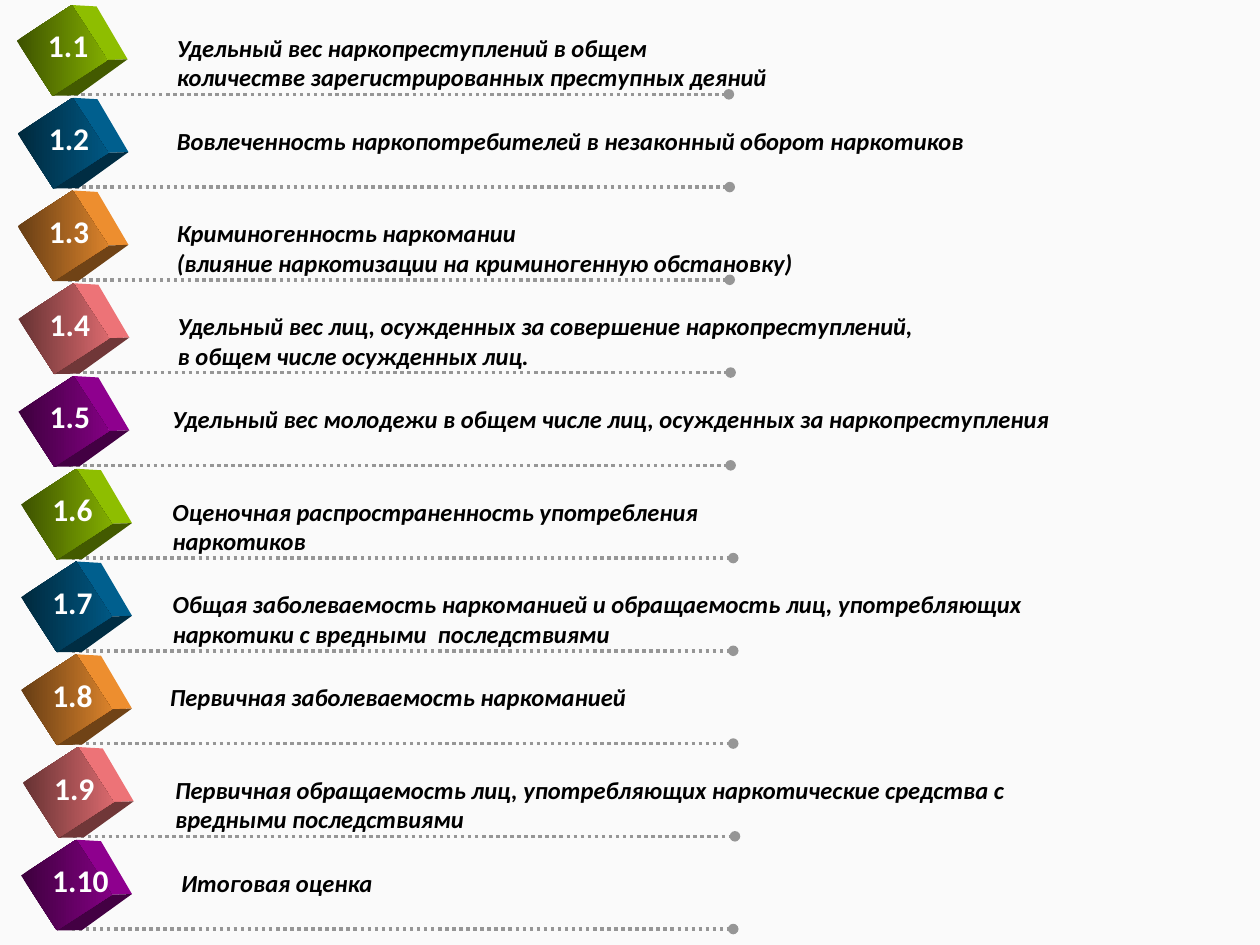
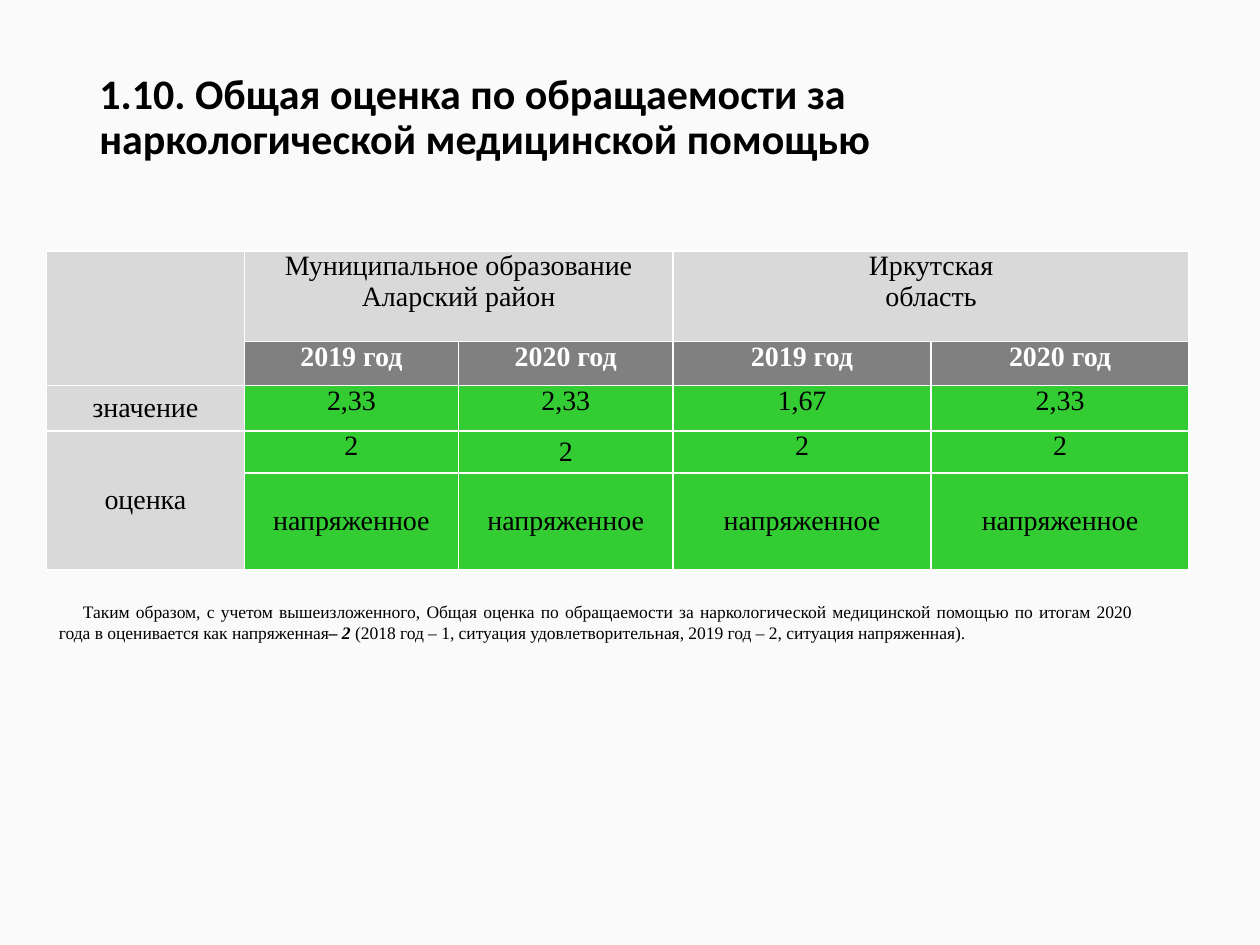
from dataclasses import dataclass
from math import cos, radians, sin

from lxml.etree import SubElement
from pptx import Presentation
from pptx.dml.color import RGBColor
from pptx.enum.dml import MSO_LINE
from pptx.enum.shapes import MSO_CONNECTOR as Connector, MSO_SHAPE as Shape
from pptx.enum.text import MSO_ANCHOR as Anchor, PP_ALIGN as Align
from pptx.oxml import parse_xml
from pptx.oxml.ns import nsdecls, qn
from pptx.util import Pt


@dataclass(frozen=True)
class Theme:
    sans: str = "Calibri"
    serif: str = "Times New Roman"
    background: str = "FAFAFA"
    black: str = "000000"
    white: str = "FFFFFF"
    dots: str = "969696"
    label_fill: str = "D9D9D9"
    year_fill: str = "808080"
    score_fill: str = "33CC33"
    cubes: tuple = ("99CC00", "006699", "FF9933", "FF7C80", "990099")
    title_size: int = 24
    number_size: int = 18
    table_size: int = 16
    item_size: int = 14
    note_size: int = 10


THEME = Theme()

# Content: number, cube left, text left, text width, lines
INDICATORS = [
    ("1.1", 16, 94, 401, ["Удельный вес наркопреступлений в общем",
                          "количестве зарегистрированных преступных деяний"]),
    ("1.2", 16.5, 94, 518, ["Вовлеченность наркопотребителей в незаконный оборот наркотиков"]),
    ("1.3", 16.5, 94, 416, ["Криминогенность наркомании",
                            "(влияние наркотизации на криминогенную обстановку)"]),
    ("1.4", 17, 94.5, 488, ["Удельный вес лиц, осужденных за совершение наркопреступлений,",
                            "в общем числе осужденных лиц."]),
    ("1.5", 17, 91.5, 570,
     ["Удельный вес молодежи в общем числе лиц, осужденных за наркопреступления"]),
    ("1.6", 18.5, 91.5, 332, ["Оценочная распространенность употребления наркотиков"]),
    ("1.7", 18.5, 91.5, 525, ["Общая заболеваемость наркоманией и обращаемость лиц, "
                              "употребляющих наркотики с вредными  последствиями"]),
    ("1.8", 18.5, 90, 480, ["Первичная заболеваемость наркоманией"]),
    ("1.9", 19.5, 93, 492, ["Первичная обращаемость лиц, употребляющих наркотические "
                            "средства с вредными последствиями"]),
    ("1.10", 18.5, 96.5, 401, ["Итоговая оценка"]),
]

TITLE = "1.10. Общая оценка по обращаемости за наркологической медицинской помощью"
COLUMNS = [113, 122.5, 122.5, 147.5, 147.5]
ROWS = [52, 25, 26, 24, 55.5]
SCORES = [
    ["", "Муниципальное образование Аларский район", "", "Иркутская\nобласть", ""],
    ["", "2019 год", "2020 год", "2019 год", "2020 год"],
    ["значение", "2,33", "2,33", "1,67", "2,33"],
    ["оценка", "2", "2", "2", "2"],
    ["", "напряженное", "напряженное", "напряженное", "напряженное"],
]
MERGES = [((0, 0), (1, 0)), ((0, 1), (0, 2)), ((0, 3), (0, 4)), ((3, 0), (4, 0))]
NOTE = [
    ("Таким образом, с учетом вышеизложенного, Общая оценка по обращаемости за "
     "наркологической медицинской помощью по итогам 2020 года в оценивается как "
     "напряженная", False),
    ("– 2 ", True),
    ("(2018 год – 1, ситуация удовлетворительная, 2019 год – 2, ситуация напряженная).", False),
]

# Geometry of the list
FIRST_TOP, ROW_PITCH = 8.6, 53
CUBE_SIDE, CUBE_TURN = 37.5, 57
LINE_LENGTH = 378


def color(code, factor=1.0):
    return RGBColor(*(round(part * factor) for part in RGBColor.from_string(code)))


def style(font, size, code, name=THEME.sans, bold=False, italic=False):
    font.name, font.size = name, Pt(size)
    font.bold, font.italic = bold, italic
    font.color.rgb = color(code)


def add_text(shapes, left, top, width, height, lines, size, code=THEME.black,
             italic=False, wrap=True):
    box = shapes.add_textbox(Pt(left), Pt(top), Pt(width), Pt(height))
    frame = box.text_frame
    frame.word_wrap = wrap
    frame.text = "\n".join(lines)
    for para in frame.paragraphs:
        style(para.font, size, code, bold=True, italic=italic)
    return frame


def add_page(deck):
    page = deck.slides.add_slide(deck.slide_layouts[6])
    page.background.fill.solid()
    page.background.fill.fore_color.rgb = color(THEME.background)
    return page


def add_dotted_line(shapes, left, y):
    line = shapes.add_connector(Connector.STRAIGHT, Pt(left), Pt(y),
                                Pt(left + LINE_LENGTH), Pt(y))
    line.line.color.rgb = color(THEME.dots)
    line.line.width = Pt(2)
    line.line.dash_style = MSO_LINE.ROUND_DOT
    SubElement(line.line._get_or_add_ln(), qn("a:tailEnd"), type="oval")
    SubElement(line._element.spPr, qn("a:effectLst"))


def add_cube(shapes, center_x, center_y, code):
    # Corners of the turned front square, measured from its centre
    half, turn = CUBE_SIDE / 2, radians(CUBE_TURN)
    across, along = half * cos(turn), half * sin(turn)
    upper = (along - across, -along - across)
    right = (across + along, along - across)
    lower = (across - along, along + across)
    far_upper, far_right, far_lower = (19.7, -25.1), (37.4, 5.1), (8.9, 25.7)

    # Lit and shaded sides
    for corners, shade in (((upper, far_upper, far_right, right), 0.93),
                           ((lower, right, far_right, far_lower), 0.44)):
        points = [(Pt(center_x + x), Pt(center_y + y)) for x, y in corners]
        builder = shapes.build_freeform(*points[0])
        builder.add_line_segments(points[1:], close=True)
        side = builder.convert_to_shape()
        side.fill.solid()
        side.fill.fore_color.rgb = color(code, shade)
        side.line.fill.background()
        side.shadow.inherit = False

    # Front
    front = shapes.add_shape(Shape.RECTANGLE, Pt(center_x - half), Pt(center_y - half),
                             Pt(CUBE_SIDE), Pt(CUBE_SIDE))
    front.rotation = CUBE_TURN
    front.fill.gradient()
    front.fill.gradient_angle = CUBE_TURN
    for stop, shade in zip(front.fill.gradient_stops, (0.4, 0.85)):
        stop.color.rgb = color(code, shade)
    front.line.fill.background()
    front.shadow.inherit = False


def build_list(deck):
    page = add_page(deck)
    for index, (number, left, text_left, text_width, lines) in enumerate(INDICATORS):
        top = FIRST_TOP + index * ROW_PITCH
        shapes = page.shapes.add_group_shape().shapes
        add_dotted_line(shapes, left + 22.5, top + 45.3)
        add_cube(shapes, left + 19.5, top + 20.2, THEME.cubes[index % len(THEME.cubes)])
        add_text(shapes, text_left, top + 6.7, text_width, 41, lines,
                 THEME.item_size, italic=True)
        add_text(shapes, left + 4.3, top + 3, 37.5 if len(number) < 4 else 47, 29,
                 [number], THEME.number_size, THEME.white, wrap=False)


def cell_fill(row, column):
    if row == 0 or column == 0:
        return THEME.label_fill
    return THEME.year_fill if row == 1 else THEME.score_fill


def add_borders(cell):
    properties = cell._tc.get_or_add_tcPr()
    for position, side in enumerate(("lnL", "lnR", "lnT", "lnB")):
        properties.insert(position, parse_xml(
            f'<a:{side} {nsdecls("a")} w="12700"><a:solidFill>'
            f'<a:srgbClr val="{THEME.white}"/></a:solidFill></a:{side}>'))


def add_scores(page):
    table = page.shapes.add_table(len(ROWS), len(COLUMNS), Pt(26.6), Pt(143.3),
                                  Pt(sum(COLUMNS)), Pt(sum(ROWS))).table
    table.first_row = table.horz_banding = False
    for column, width in zip(table.columns, COLUMNS):
        column.width = Pt(width)
    for row, height in zip(table.rows, ROWS):
        row.height = Pt(height)
    for start, end in MERGES:
        table.cell(*start).merge(table.cell(*end))
    for row, texts in enumerate(SCORES):
        for column, text in enumerate(texts):
            cell = table.cell(row, column)
            cell.fill.solid()
            cell.fill.fore_color.rgb = color(cell_fill(row, column))
            add_borders(cell)
            cell.margin_left = cell.margin_right = Pt(3)
            cell.margin_top = cell.margin_bottom = 0
            centered = column == 0 or row == 4 or (row, column) == (3, 2)
            cell.vertical_anchor = Anchor.MIDDLE if centered else Anchor.TOP
            if not text:
                continue
            cell.text = text
            for para in cell.text_frame.paragraphs:
                para.alignment = Align.CENTER
                style(para.font, THEME.table_size,
                      THEME.white if row == 1 else THEME.black, THEME.serif, bold=row == 1)


def build_scores(deck):
    page = add_page(deck)

    # Title
    frame = add_text(page.shapes, 49.7, 28.8, 620.6, 104.4, [TITLE], THEME.title_size)
    frame.vertical_anchor = Anchor.MIDDLE
    frame.margin_bottom = Pt(30)
    frame.paragraphs[0].line_spacing = 0.9

    add_scores(page)

    # Conclusion
    box = page.shapes.add_textbox(Pt(26.6), Pt(339.8), Pt(627), Pt(31.7))
    box.text_frame.word_wrap = True
    para = box.text_frame.paragraphs[0]
    para.alignment = Align.JUSTIFY
    para._p.get_or_add_pPr().set("indent", str(Pt(13.7)))
    for text, strong in NOTE:
        span = para.add_run()
        span.text = text
        style(span.font, THEME.note_size, THEME.black, THEME.serif, strong, strong)


def main():
    deck = Presentation()
    deck.slide_width, deck.slide_height = Pt(720), Pt(540)
    build_list(deck)
    build_scores(deck)
    deck.save("out.pptx")


if __name__ == "__main__":
    main()
